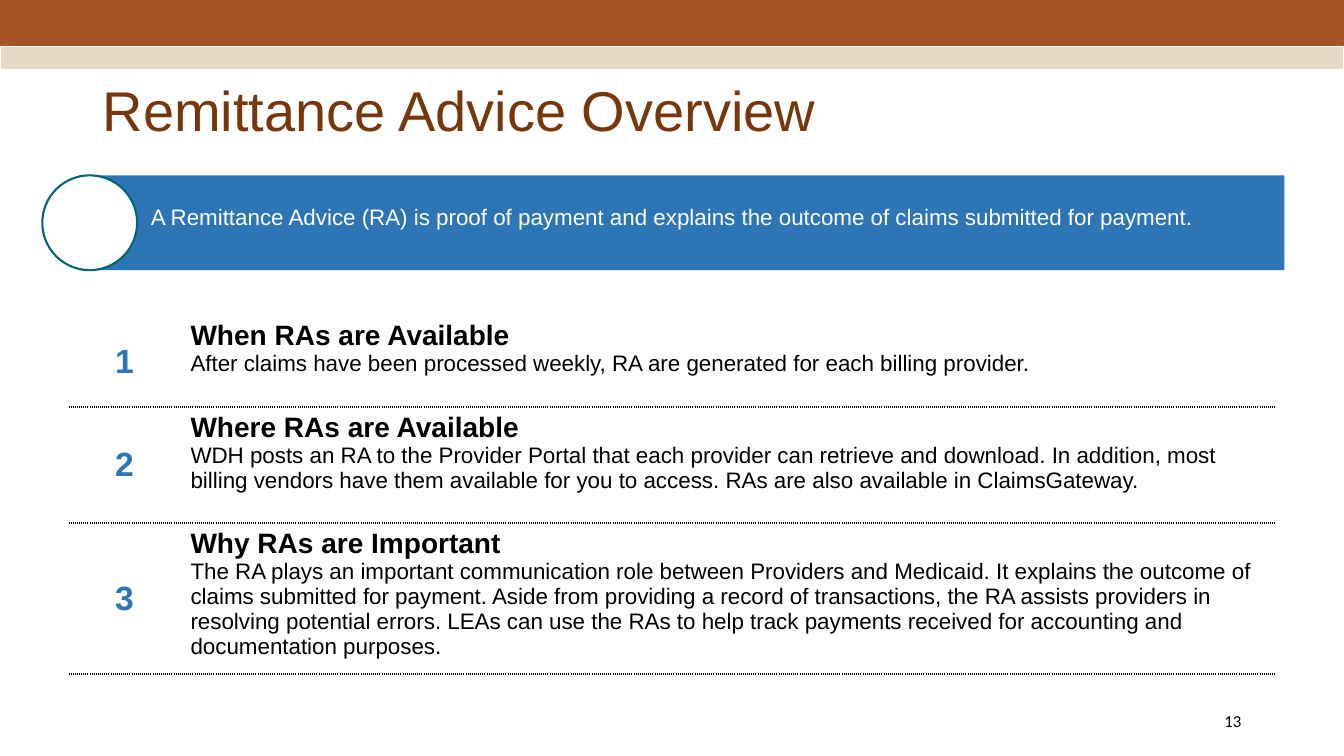
import pptx
import pptx.util
import pptx.dml.color
import pptx.enum.shapes
import pptx.enum.text
import pptx.oxml
from pptx.util import Inches

ALIGN = pptx.enum.text.PP_ALIGN
ANCHOR = pptx.enum.text.MSO_ANCHOR
SHAPE = pptx.enum.shapes.MSO_SHAPE

THEME = {
    "colors": {
        "rust": "A55525", "sand": "E6D8C5", "brown": "77370B", "blue": "2E75B6",
        "teal": "036479", "white": "FFFFFF", "black": "000000",
    },
    "sizes": {"title": 40, "number": 24, "heading": 20, "body": 16, "page": 12},
}


def color(name):
    return pptx.dml.color.RGBColor.from_string(THEME["colors"][name])


def write(paragraph, text, size, ink, bold=False, align=ALIGN.LEFT, spacing=1.0, font="Arial"):
    paragraph.alignment = align
    paragraph.line_spacing = spacing
    run = paragraph.add_run()
    run.text = text
    formats = {"name": font, "size": pptx.util.Pt(THEME["sizes"][size]), "bold": bold}
    for name, value in formats.items():
        setattr(run.font, name, value)
    run.font.color.rgb = color(ink)


presentation = pptx.Presentation()
presentation.slide_width = Inches(13.33)
presentation.slide_height = Inches(7.5)
slide = presentation.slides.add_slide(presentation.slide_layouts[6])

# Header bands, banner and its circle: kind, place, fill, line, line width
shapes = {}
for name, kind, place, fill, line, width in [
    ("rust band", SHAPE.RECTANGLE, (0, 0, 13.33, 0.46), "rust", None, 0),
    ("sand band", SHAPE.RECTANGLE, (0, 0.46, 13.33, 0.23), "sand", "white", 1),
    ("banner", SHAPE.RECTANGLE, (0.78, 1.74, 11.96, 0.94), "blue", None, 0),
    ("circle", SHAPE.OVAL, (0.42, 1.74, 0.94, 0.94), "white", "teal", 1.5),
]:
    shape = slide.shapes.add_shape(kind, *map(Inches, place))
    shape.shadow.inherit = False
    shape.fill.solid()
    shape.fill.fore_color.rgb = color(fill)
    if line:
        shape.line.color.rgb = color(line)
        shape.line.width = pptx.util.Pt(width)
    else:
        shape.line.fill.background()
    shapes[name] = shape

# Banner text
banner_frame = shapes["banner"].text_frame
banner_format = {
    "word_wrap": True, "vertical_anchor": ANCHOR.TOP, "margin_left": Inches(0.07),
    "margin_right": Inches(0.26), "margin_top": Inches(0.28), "margin_bottom": Inches(0.04),
}
for name, value in banner_format.items():
    setattr(banner_frame, name, value)
write(banner_frame.paragraphs[0],
      "A Remittance Advice (RA) is proof of payment and explains the outcome of claims "
      "submitted for payment.", "body", "white", align=ALIGN.CENTER)

# Title and page number
for place, text, size, ink, align, spacing, font in [
    ((0.92, 0.4, 11.5, 1.45), "Remittance Advice Overview", "title", "brown", ALIGN.LEFT, 0.9, "Arial"),
    ((9.41, 6.95, 3, 0.4), "13", "page", "black", ALIGN.RIGHT, 1.0, "Calibri"),
]:
    text_frame = slide.shapes.add_textbox(*map(Inches, place)).text_frame
    text_frame.word_wrap = True
    text_frame.vertical_anchor = ANCHOR.MIDDLE
    write(text_frame.paragraphs[0], text, size, ink, align=align, spacing=spacing, font=font)

# Table of numbered topics: row height, heading, body
topics = [
    (0.91, "When RAs are Available",
     "After claims have been processed weekly, RA are generated for each billing provider."),
    (1.15, "Where RAs are Available",
     "WDH posts an RA to the Provider Portal that each provider can retrieve and download. "
     "In addition, most billing vendors have them available for you to access. "
     "RAs are also available in ClaimsGateway."),
    (1.39, "Why RAs are Important",
     "The RA plays an important communication role between Providers and Medicaid. "
     "It explains the outcome of claims submitted for payment. Aside from providing a record "
     "of transactions, the RA assists providers in resolving potential errors. LEAs can use "
     "the RAs to help track payments received for accounting and documentation purposes."),
]
table_height = sum(topic[0] for topic in topics)
table = slide.shapes.add_table(
    len(topics), 2, Inches(0.68), Inches(3.13), Inches(11.97), Inches(table_height)).table
table.first_row = False
table.horz_banding = False
for column, width in zip(table.columns, (1.11, 10.86)):
    column.width = Inches(width)

for index, (height, heading, body) in enumerate(topics):
    table.rows[index].height = Inches(height)
    number_cell, text_cell = table.cell(index, 0), table.cell(index, 1)
    number_cell.vertical_anchor = ANCHOR.MIDDLE
    write(number_cell.text_frame.paragraphs[0], str(index + 1), "number", "blue",
          bold=True, align=ALIGN.CENTER)
    write(text_cell.text_frame.paragraphs[0], heading, "heading", "black", bold=True)
    write(text_cell.text_frame.add_paragraph(), body, "body", "black")

    # Dotted rules below every row, no other borders
    for cell in (number_cell, text_cell):
        cell_properties = cell._tc.get_or_add_tcPr()
        for side in ("lnL", "lnR", "lnT", "lnB"):
            ruled = side == "lnB" or (side == "lnT" and index > 0)
            stroke = (f'<a:solidFill><a:srgbClr val="{THEME["colors"]["black"]}"/></a:solidFill>'
                      '<a:prstDash val="sysDot"/>') if ruled else "<a:noFill/>"
            cell_properties.append(pptx.oxml.parse_xml(
                f'<a:{side} xmlns:a="http://schemas.openxmlformats.org/drawingml/2006/main" '
                f'w="{pptx.util.Pt(1.5)}">{stroke}</a:{side}>'))
        cell.fill.background()

presentation.save("out.pptx")
